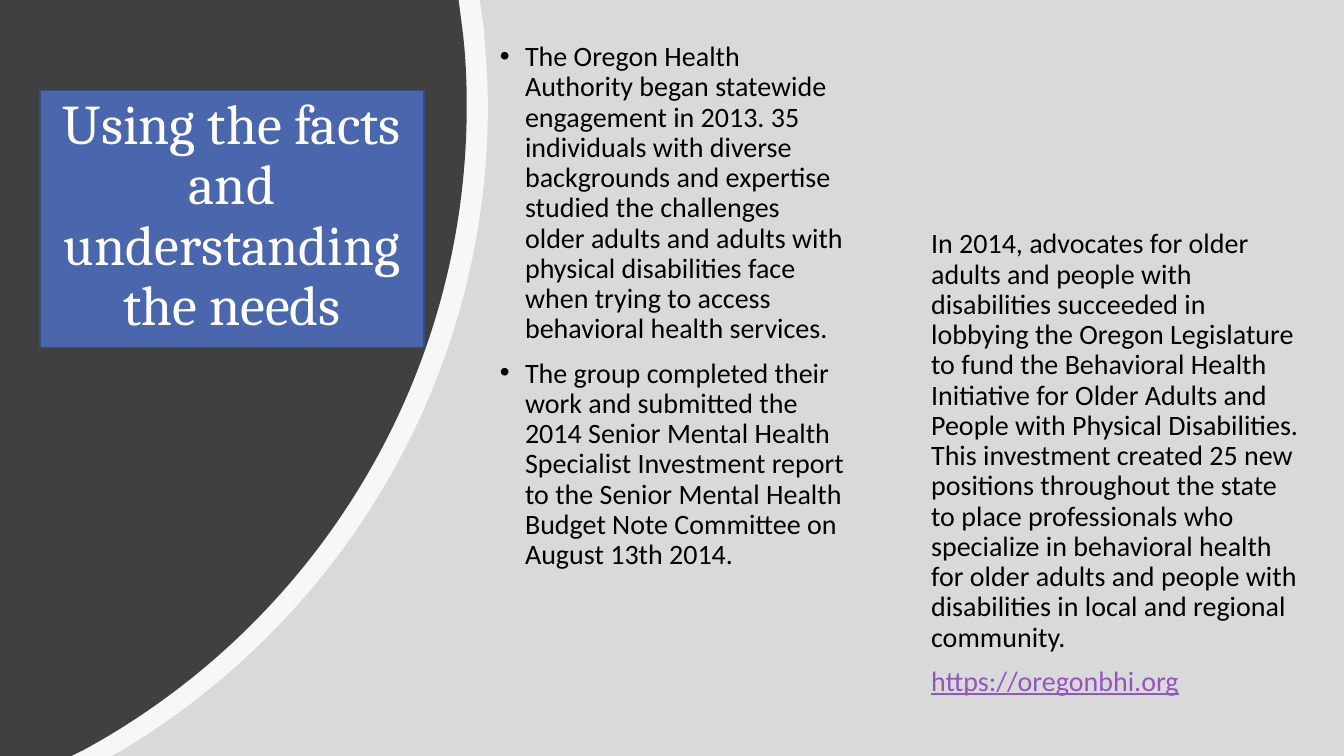
import pptx
import pptx.dml.color
import pptx.enum.shapes
import pptx.enum.text
import pptx.oxml.ns
import pptx.util
from lxml import etree

Pt = pptx.util.Pt
RGBColor = pptx.dml.color.RGBColor
Align = pptx.enum.text.PP_ALIGN
Anchor = pptx.enum.text.MSO_ANCHOR
qn = pptx.oxml.ns.qn

BLACK = RGBColor(0x00, 0x00, 0x00)
WHITE = RGBColor(0xFF, 0xFF, 0xFF)
LIGHT_GRAY = RGBColor(0xD9, 0xD9, 0xD9)
DARK_GRAY = RGBColor(0x40, 0x40, 0x40)
BLUE = RGBColor(0x4A, 0x66, 0xAC)
DARK_BLUE = RGBColor(0x37, 0x4B, 0x7F)
PURPLE = RGBColor(0x94, 0x54, 0xC3)

WIDTH, HEIGHT = 960, 540

TITLE = "Using the facts and understanding the needs"
HISTORY = [
    "The Oregon Health Authority began statewide engagement in 2013. 35 individuals "
    "with diverse backgrounds and expertise studied the challenges older adults and "
    "adults with physical disabilities face when trying to access behavioral health "
    "services.",
    "The group completed their work and submitted the 2014 Senior Mental Health "
    "Specialist Investment report to the Senior Mental Health Budget Note Committee "
    "on August 13th 2014.",
]
INITIATIVE = (
    "In 2014, advocates for older adults and people with disabilities succeeded in "
    "lobbying the Oregon Legislature to fund the Behavioral Health Initiative for "
    "Older Adults and People with Physical Disabilities. This investment created 25 "
    "new positions throughout the state to place professionals who specialize in "
    "behavioral health for older adults and people with disabilities in local and "
    "regional community."
)
WEB_ADDRESS = "https://oregonbhi.org"

# Each edge: two points, then two Bezier segments of three points, then the bottom point.
OUTER_EDGE = [(342.7, 0), (345.6, 20.9), (347, 38.9), (348.5, 57.6), (348.5, 75.6),
              (348.5, 270), (244.8, 439.9), (90, 534.2), (79.9, HEIGHT)]
INNER_EDGE = [(327.6, 0), (330.5, 22.3), (332.6, 39.6), (333.4, 57.6), (333.4, 75.6),
              (333.4, 274.3), (222.5, 447.1), (59.8, 535.7), (51.1, HEIGHT)]
CURVE_STARTS = (2, 5)


def add_rectangle(page, left, top, width, height, fill, line=None):
    box = page.shapes.add_shape(pptx.enum.shapes.MSO_SHAPE.RECTANGLE,
                                Pt(left), Pt(top), Pt(width), Pt(height))
    box.shadow.inherit = False
    box.fill.solid()
    box.fill.fore_color.rgb = fill
    if line is None:
        box.line.fill.background()
    else:
        box.line.color.rgb = line
        box.line.width = Pt(1)
    return box


def bend_segments(panel):
    """Turn each group of three straight segments into one cubic curve."""
    segments = list(panel._element.iter(qn("a:lnTo")))
    for start in CURVE_STARTS:
        curve = etree.Element(qn("a:cubicBezTo"))
        segments[start].addprevious(curve)
        for segment in segments[start:start + 3]:
            curve.append(segment[0])
            segment.getparent().remove(segment)


def add_curved_panel(page, edge, fill, opacity=100):
    """Fill the area between the left side of the page and a curved edge."""
    builder = page.shapes.build_freeform(0, 0)
    builder.add_line_segments([(Pt(x), Pt(y)) for x, y in edge + [(0, HEIGHT)]])
    panel = builder.convert_to_shape()
    bend_segments(panel)
    panel.shadow.inherit = False
    panel.fill.solid()
    panel.fill.fore_color.rgb = fill
    panel.line.fill.background()
    if opacity < 100:
        color = panel.fill._xPr.find(qn("a:solidFill"))[0]
        etree.SubElement(color, qn("a:alpha"), val=str(opacity * 1000))


def add_text_box(page, left, top, width, height):
    box = page.shapes.add_textbox(Pt(left), Pt(top), Pt(width), Pt(height))
    box.text_frame.word_wrap = True
    return box.text_frame


def add_paragraph(frame, text, size=20, font="Calibri", color=BLACK,
                  align=Align.LEFT, bullet=False, underline=False):
    first = not frame.paragraphs[0].runs
    para = frame.paragraphs[0] if first else frame.add_paragraph()
    para.alignment = align
    para.line_spacing = 0.9
    if not first:
        para.space_before = Pt(10)
    if bullet:
        properties = para._p.get_or_add_pPr()
        properties.set("marL", str(Pt(18)))
        properties.set("indent", str(-Pt(18)))
        etree.SubElement(properties, qn("a:buFont"), typeface="Arial")
        etree.SubElement(properties, qn("a:buChar"), char="•")
    span = para.add_run()
    span.text = text
    span.font.size = Pt(size)
    span.font.name = font
    span.font.color.rgb = color
    if underline:
        span.font.underline = True


def main():
    deck = pptx.Presentation()
    deck.slide_width, deck.slide_height = Pt(WIDTH), Pt(HEIGHT)
    page = deck.slides.add_slide(deck.slide_layouts[6])

    add_rectangle(page, 0, 0, WIDTH, HEIGHT, LIGHT_GRAY)
    add_curved_panel(page, OUTER_EDGE, WHITE, opacity=80)
    add_curved_panel(page, INNER_EDGE, DARK_GRAY)

    title = add_rectangle(page, 28.5, 64.8, 274.3, 183.4, BLUE, DARK_BLUE).text_frame
    title.word_wrap = True
    title.vertical_anchor = Anchor.MIDDLE
    title.margin_bottom = Pt(6.6)
    add_paragraph(title, TITLE, 40, "Cambria", WHITE, Align.CENTER)

    history = add_text_box(page, 350, 26.8, 260.5, 426)
    for text in HISTORY:
        add_paragraph(history, text, bullet=True)

    initiative = add_text_box(page, 658, 126, 278, 376.5)
    initiative.margin_top = Pt(38.1)
    add_paragraph(initiative, INITIATIVE)
    add_paragraph(initiative, WEB_ADDRESS, color=PURPLE, underline=True)

    deck.save("out.pptx")


if __name__ == "__main__":
    main()
